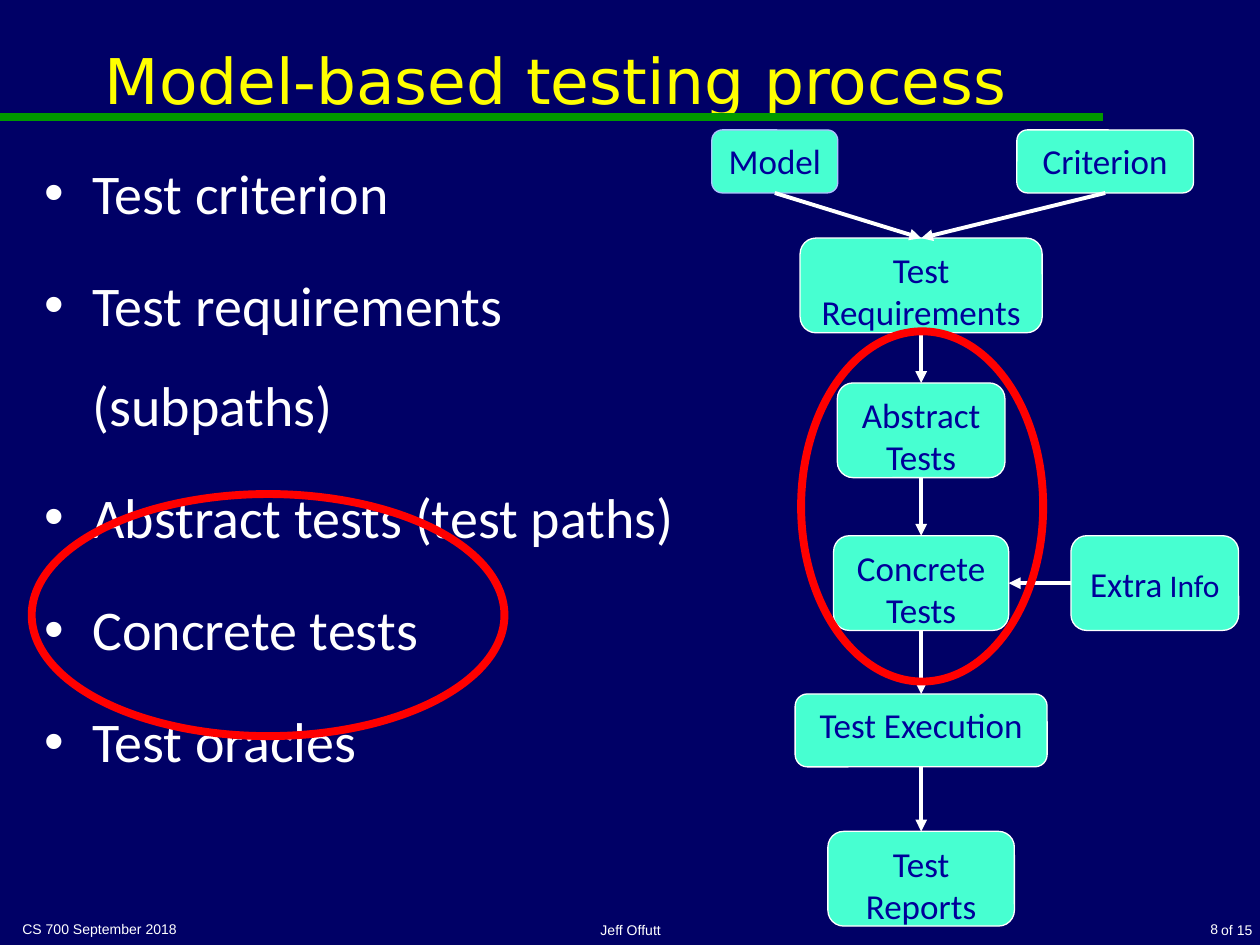
from pptx import Presentation
from pptx.dml.color import RGBColor
from pptx.enum.shapes import MSO_CONNECTOR, MSO_SHAPE
from pptx.enum.text import MSO_ANCHOR, MSO_AUTO_SIZE, PP_ALIGN
from pptx.oxml.ns import qn
from pptx.util import Cm, Pt
from lxml import etree

STRAIGHT = MSO_CONNECTOR.STRAIGHT
ROUNDED, OVAL = MSO_SHAPE.ROUNDED_RECTANGLE, MSO_SHAPE.OVAL
TOP, MIDDLE, BOTTOM = MSO_ANCHOR.TOP, MSO_ANCHOR.MIDDLE, MSO_ANCHOR.BOTTOM
LEFT, CENTER, RIGHT = PP_ALIGN.LEFT, PP_ALIGN.CENTER, PP_ALIGN.RIGHT
NO_FIT = MSO_AUTO_SIZE.NONE
# Connection sites of a rectangle
SITE_TOP, SITE_LEFT, SITE_BOTTOM, SITE_RIGHT = range(4)


def color(hex_string):
    return RGBColor.from_string(hex_string)


class ProcessSlide:
    NAVY, WHITE, YELLOW = "000066", "FFFFFF", "FFFF00"
    GREEN, RED, MINT, INK = "009900", "FF0000", "47FFD1", "000099"
    HEADING, TEXT, SMALL = "DejaVu Sans", "Calibri", "Arial"

    def __init__(self, slide):
        self.slide = slide
        slide.background.fill.solid()
        slide.background.fill.fore_color.rgb = color(self.NAVY)

    def style(self, paragraph, font_name, size, hex_string, align):
        paragraph.alignment = align
        font = paragraph.font
        font.name, font.size = font_name, Pt(size)
        font.color.rgb = color(hex_string)

    def place(self, shape, left, top, width, height):
        shape.left, shape.top = Cm(left), Cm(top)
        shape.width, shape.height = Cm(width), Cm(height)

    def title(self, text, *area):
        heading = self.slide.shapes.title
        self.place(heading, *area)
        frame = heading.text_frame
        frame.text = text
        frame.auto_size, frame.vertical_anchor = NO_FIT, MIDDLE
        self.style(frame.paragraphs[0], self.HEADING, 36, self.YELLOW, CENTER)

    def bullets(self, items, *area):
        body = self.slide.placeholders[1]
        self.place(body, *area)
        frame = body.text_frame
        frame.text = "\n".join(items)
        frame.auto_size, frame.vertical_anchor = NO_FIT, TOP
        frame.margin_top = 0
        for index, paragraph in enumerate(frame.paragraphs):
            properties = paragraph._p.get_or_add_pPr()
            properties.set("marL", str(Cm(0.97)))
            properties.set("indent", str(-Cm(0.97)))
            etree.SubElement(properties, qn("a:buChar")).set("char", "•")
            paragraph.line_spacing = 1.5
            paragraph.space_before = Pt(6.4 if index else 0)
            self.style(paragraph, self.TEXT, 32, self.WHITE, LEFT)

    def small_text(self, text, align, *area, wrap=True):
        box = self.slide.shapes.add_textbox(*map(Cm, area))
        frame = box.text_frame
        frame.text = text
        frame.word_wrap = wrap
        frame.vertical_anchor = BOTTOM
        self.style(frame.paragraphs[0], self.SMALL, 8, self.WHITE, align)

    def step(self, text, center, top, width, height=1.91, border=WHITE, anchor=TOP):
        box = self.slide.shapes.add_shape(
            ROUNDED, Cm(center - width / 2), Cm(top), Cm(width), Cm(height))
        box.shadow.inherit = False
        box.fill.solid()
        box.fill.fore_color.rgb = color(self.MINT)
        box.line.color.rgb = color(border)
        box.line.width = Pt(0.75)
        frame = box.text_frame
        frame.text = text
        frame.word_wrap, frame.vertical_anchor = True, anchor
        self.style(frame.paragraphs[0], self.TEXT, 20, self.INK, CENTER)
        return box

    def line(self, start, end, hex_string, width):
        line = self.slide.shapes.add_connector(STRAIGHT, *map(Cm, start + end))
        line.line.color.rgb = color(hex_string)
        line.line.width = Pt(width)
        etree.SubElement(line._element.spPr, qn("a:effectLst"))
        return line

    def arrow(self, source, target, leave=SITE_BOTTOM, enter=SITE_TOP):
        arrow = self.line((0, 0), (0, 0), self.WHITE, 2.25)
        arrow.begin_connect(source, leave)
        arrow.end_connect(target, enter)
        outline = arrow.line._get_or_add_ln()
        etree.SubElement(outline, qn("a:tailEnd")).set("type", "triangle")

    def highlight(self, *area):
        ring = self.slide.shapes.add_shape(OVAL, *map(Cm, area))
        ring.shadow.inherit = False
        ring.fill.background()
        ring.line.color.rgb = color(self.RED)
        ring.line.width = Pt(4.5)


def main():
    deck = Presentation()
    deck.slide_width, deck.slide_height = Cm(25.4), Cm(19.05)
    page = ProcessSlide(deck.slides.add_slide(deck.slide_layouts[1]))

    # Heading and list
    page.line((0, 2.36), (22.23, 2.36), page.GREEN, 4.5)
    page.title("Model-based testing process", 0.2, 0, 22.02, 3.18)
    page.bullets(["Test criterion", "Test requirements (subpaths)",
                  "Abstract tests (test paths)", "Concrete tests",
                  "Test oracles"], 0.64, 2.51, 14.78, 15.06)

    # Inputs of the process
    model = page.step("Model", 15.62, 2.62, 2.54, 1.27, border="ADC2FF")
    criterion = page.step("Criterion", 22.28, 2.62, 3.56, 1.27)
    extra = page.step("Extra", 23.28, 10.8, 3.38, anchor=MIDDLE)
    info = extra.text_frame.paragraphs[0].add_run()
    info.text = " Info"
    info.font.size = Pt(18)

    # Steps on one vertical axis
    axis = 18.57
    requirements = page.step("Test Requirements", axis, 4.8, 4.88)
    abstract = page.step("Abstract Tests", axis, 7.72, 3.38)
    concrete = page.step("Concrete Tests", axis, 10.8, 3.53)
    execution = page.step("Test Execution", axis, 13.99, 5.08, 1.47)
    reports = page.step("Test Reports", axis, 16.76, 3.76)

    # Flow
    page.arrow(model, requirements)
    page.arrow(criterion, requirements)
    chain = [requirements, abstract, concrete, execution, reports]
    for source, target in zip(chain, chain[1:]):
        page.arrow(source, target)
    page.arrow(extra, concrete, SITE_LEFT, SITE_RIGHT)

    # Highlights on the abstract and concrete tests
    page.highlight(16.15, 6.68, 4.88, 7.06)
    page.highlight(0.64, 9.96, 9.53, 4.88)

    # Footer
    page.small_text("CS 700 September 2018", LEFT, 0.2, 18.19, 5.92, 0.84)
    page.small_text("Jeff Offutt", CENTER, 8.69, 18.2, 8.05, 0.84)
    page.small_text("8", RIGHT, 19.25, 18.19, 5.56, 0.84)
    page.small_text("of 15", RIGHT, 24.36, 18.44, 1.14, 0.6, wrap=False)

    deck.save("out.pptx")


if __name__ == "__main__":
    main()
